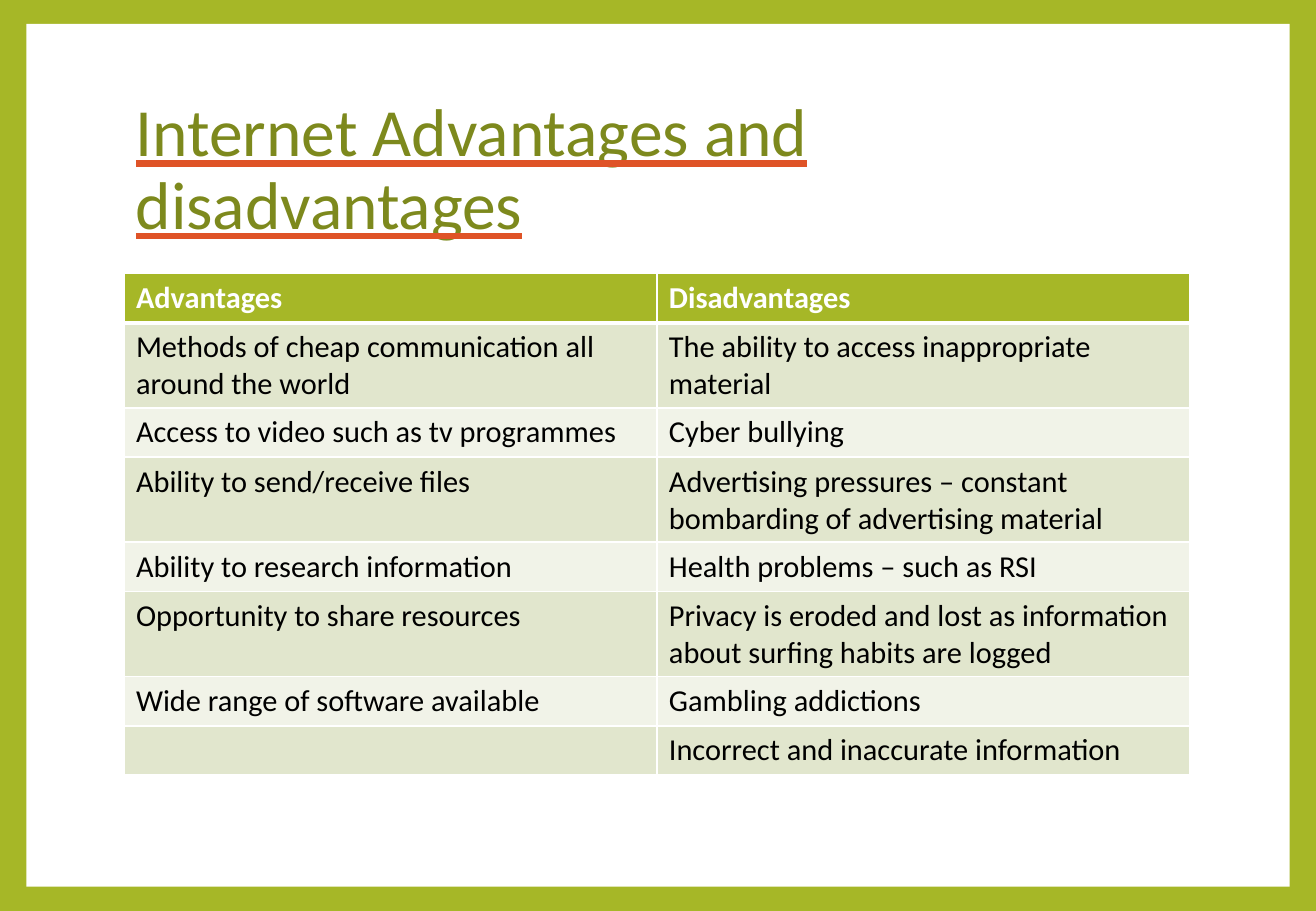
from dataclasses import dataclass

from lxml.etree import SubElement
from pptx import Presentation
from pptx.dml.color import RGBColor
from pptx.enum.shapes import MSO_SHAPE
from pptx.enum.text import MSO_ANCHOR
from pptx.oxml.ns import qn
from pptx.slide import Slide
from pptx.table import _Cell
from pptx.text.text import _Paragraph, _Run
from pptx.util import Cm, Pt


@dataclass(frozen=True)
class Theme:
    font: str = "Calibri"
    title_size: int = 40
    table_size: int = 18
    green: str = "A6B727"
    dark_green: str = "7D891D"
    underline: str = "DF5327"
    white: str = "FFFFFF"
    black: str = "000000"
    bands: tuple[str, str] = ("E1E6CD", "F1F3E8")
    border: float = 1
    header_border: float = 3


@dataclass(frozen=True)
class Comparison:
    advantage: str
    disadvantage: str


THEME = Theme()
SLIDE_WIDTH, SLIDE_HEIGHT = Cm(27.51), Cm(19.05)
CONTENT_LEFT, CONTENT_WIDTH = Cm(2.59), Cm(22.28)
ROW_HEIGHT = Cm(1.03)
TITLE = "Internet Advantages and disadvantages"
COMPARISONS = [
    Comparison("Advantages", "Disadvantages"),
    Comparison("Methods of cheap communication all around the world",
               "The ability to access inappropriate material"),
    Comparison("Access to video such as tv programmes", "Cyber bullying"),
    Comparison("Ability to send/receive files",
               "Advertising pressures – constant bombarding of advertising material"),
    Comparison("Ability to research information", "Health problems – such as RSI"),
    Comparison("Opportunity to share resources",
               "Privacy is eroded and lost as information about surfing habits are logged"),
    Comparison("Wide range of software available", "Gambling addictions"),
    Comparison("", "Incorrect and inaccurate information"),
]


def add_run(paragraph: _Paragraph, text: str, size: float, color: str,
            bold: bool = False) -> _Run:
    run = paragraph.add_run()
    run.text = text
    run.font.name = THEME.font
    run.font.size = Pt(size)
    run.font.bold = bold
    run.font.color.rgb = RGBColor.from_string(color)
    return run


def underline_run(run: _Run, color: str) -> None:
    """Underline a run in a colour other than that of its text."""
    run.font.underline = True
    properties = run.font._element
    underline_fill = SubElement(properties, qn("a:uFill"))
    solid_fill = SubElement(underline_fill, qn("a:solidFill"))
    SubElement(solid_fill, qn("a:srgbClr"), val=color)
    properties.find(qn("a:latin")).addprevious(underline_fill)


def set_border(cell: _Cell, side: str, width: float) -> None:
    """Draw one cell edge; call before filling, since lines precede the fill."""
    properties = cell._tc.get_or_add_tcPr()
    line = SubElement(properties, qn(f"a:ln{side}"), w=str(Pt(width)))
    solid_fill = SubElement(line, qn("a:solidFill"))
    SubElement(solid_fill, qn("a:srgbClr"), val=THEME.white)


def format_cell(cell: _Cell, text: str, row: int) -> None:
    is_header = row == 0
    heavy_side = {0: "B", 1: "T"}.get(row)
    for side in "LRTB":
        set_border(cell, side, THEME.header_border if side == heavy_side else THEME.border)
    cell.fill.solid()
    fill = THEME.green if is_header else THEME.bands[(row - 1) % 2]
    cell.fill.fore_color.rgb = RGBColor.from_string(fill)
    if text:
        color = THEME.white if is_header else THEME.black
        add_run(cell.text_frame.paragraphs[0], text, THEME.table_size, color, is_header)


def add_frame(slide: Slide) -> None:
    """Colour the background and lay the white page over it."""
    background = slide.background.fill
    background.solid()
    background.fore_color.rgb = RGBColor.from_string(THEME.green)
    page = slide.shapes.add_shape(MSO_SHAPE.RECTANGLE, Cm(0.55), Cm(0.5), Cm(26.41), Cm(18.04))
    page.shadow.inherit = False
    page.fill.solid()
    page.fill.fore_color.rgb = RGBColor.from_string(THEME.white)
    page.line.fill.background()


def add_title(slide: Slide) -> None:
    title = slide.shapes.add_textbox(CONTENT_LEFT, Cm(1.7), CONTENT_WIDTH, Cm(3.76))
    title.text_frame.word_wrap = True
    title.text_frame.vertical_anchor = MSO_ANCHOR.MIDDLE
    paragraph = title.text_frame.paragraphs[0]
    paragraph.line_spacing = 0.9
    run = add_run(paragraph, TITLE, THEME.title_size, THEME.dark_green)
    underline_run(run, THEME.underline)


def add_comparison_table(slide: Slide) -> None:
    rows = len(COMPARISONS)
    table = slide.shapes.add_table(rows, 2, CONTENT_LEFT, Cm(5.72),
                                   CONTENT_WIDTH, ROW_HEIGHT * rows).table
    for row, comparison in enumerate(COMPARISONS):
        table.rows[row].height = ROW_HEIGHT
        for column, text in enumerate((comparison.advantage, comparison.disadvantage)):
            format_cell(table.cell(row, column), text, row)


def main() -> None:
    presentation = Presentation()
    presentation.slide_width = SLIDE_WIDTH
    presentation.slide_height = SLIDE_HEIGHT
    slide = presentation.slides.add_slide(presentation.slide_layouts[6])
    add_frame(slide)
    add_title(slide)
    add_comparison_table(slide)
    presentation.save("out.pptx")


if __name__ == "__main__":
    main()
